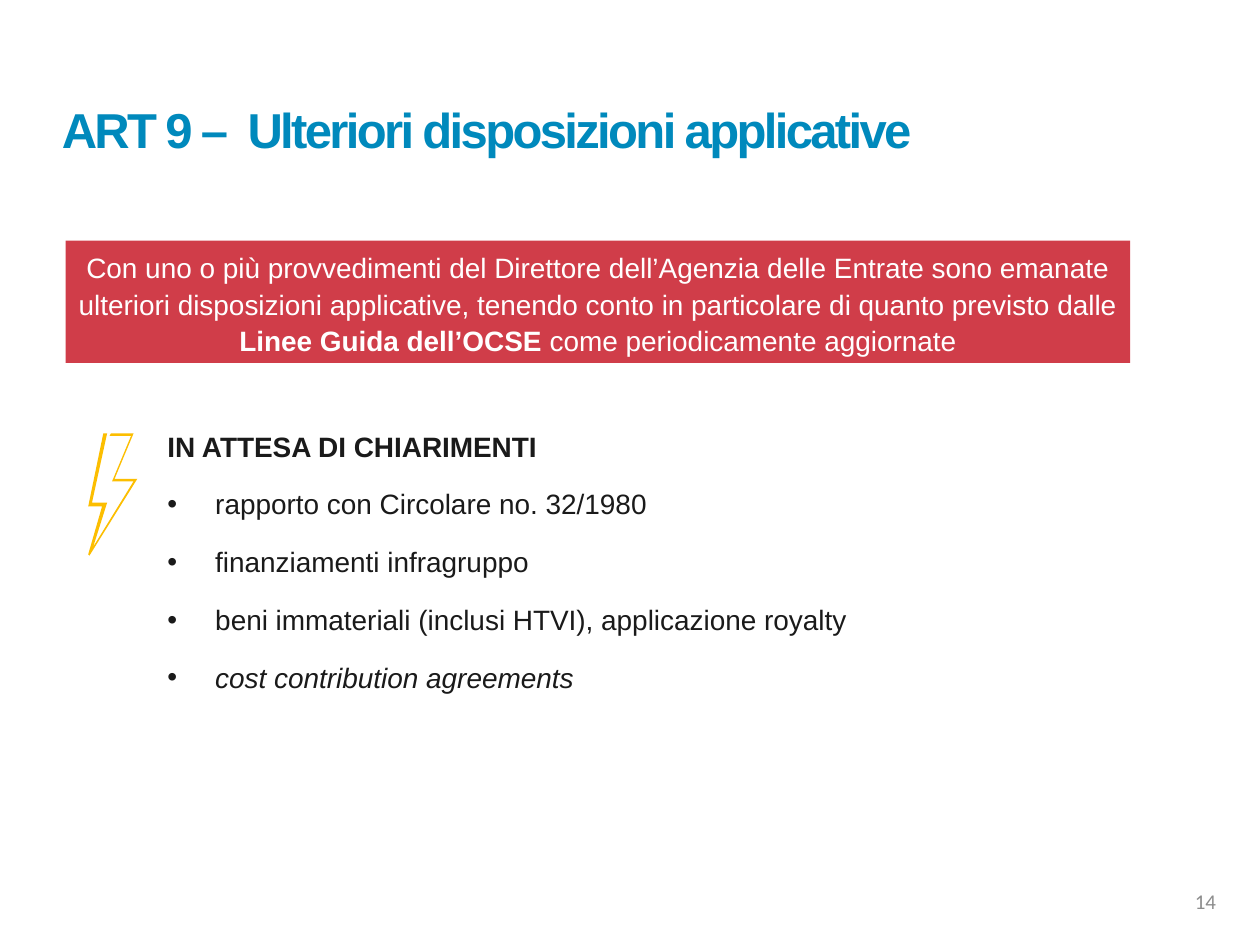
from lxml.etree import SubElement
from pptx import Presentation
from pptx.dml.color import RGBColor
from pptx.enum.shapes import MSO_SHAPE
from pptx.enum.text import MSO_ANCHOR, MSO_AUTO_SIZE, PP_ALIGN
from pptx.oxml.ns import qn
from pptx.util import Inches, Pt

# Content
TITLE = "ART 9 –  Ulteriori disposizioni applicative"
PROVISION = [
    ("Con uno o più provvedimenti del Direttore dell’Agenzia delle Entrate "
     "sono emanate ulteriori disposizioni applicative, tenendo conto in "
     "particolare di quanto previsto dalle ", False),
    ("Linee Guida dell’OCSE", True),
    (" come periodicamente aggiornate", False),
]
PENDING_HEADING = "IN ATTESA DI CHIARIMENTI"
PENDING_ISSUES = [  # text, italic
    ("rapporto con Circolare no. 32/1980", False),
    ("finanziamenti infragruppo", False),
    ("beni immateriali (inclusi HTVI), applicazione royalty", False),
    ("cost contribution agreements", True),
]
PAGE_NUMBER = "14"
BOLT = [
    (0.91, 3.8), (1.09, 3.8), (0.71, 4.41), (0.7, 4.4), (0.81, 4.02),
    (0.7, 4.02), (0.82, 3.44), (0.85, 3.44), (0.73, 3.99), (0.85, 3.99),
    (0.74, 4.34), (1.06, 3.82), (0.89, 3.82), (1.04, 3.46), (0.87, 3.46),
    (0.88, 3.44), (1.06, 3.44),
]

THEME = {
    "title": ("Arial", 28, "0089BC"),
    "body": ("Arial", 16, "1A1A1A"),
    "banner": ("Arial", 16, "FFFFFF"),
    "page": ("Calibri", 12, "8D8D8D"),
    "banner_fill": "D03D49",
    "bolt_fill": "FCBE00",
    "line_spacing": 1.1,
    "paragraph_gap": 12,
}


def box(*lengths):
    return [Inches(length) for length in lengths]


def style(run, role, bold=False, italic=False):
    face, size, colour = THEME[role]
    run.font.name, run.font.size = face, Pt(size)
    run.font.color.rgb = RGBColor.from_string(colour)
    run.font.bold, run.font.italic = bold, italic


def add_run(paragraph, text, role, bold=False, italic=False):
    run = paragraph.add_run()
    run.text = text
    style(run, role, bold, italic)


def paint(shape, colour):
    shape.fill.solid()
    shape.fill.fore_color.rgb = RGBColor.from_string(colour)
    shape.line.fill.background()
    shape.shadow.inherit = False


def add_bullet(paragraph, indent=0.38):
    properties = paragraph._p.get_or_add_pPr()
    properties.set("marL", str(Inches(indent)))
    properties.set("indent", str(-Inches(indent)))
    SubElement(properties, qn("a:buFont"), typeface="Arial")
    SubElement(properties, qn("a:buChar"), char="•")


prs = Presentation()
prs.slide_width, prs.slide_height = Inches(10), Inches(7.5)
slide = prs.slides.add_slide(prs.slide_layouts[5])

# Title
title = slide.shapes.title
title.left, title.top, title.width, title.height = box(0.39, 0.55, 7.14, 1.03)
title.text_frame.text = TITLE
title.text_frame.auto_size = MSO_AUTO_SIZE.NONE
title.text_frame.vertical_anchor = MSO_ANCHOR.MIDDLE
heading = title.text_frame.paragraphs[0]
heading.alignment, heading.line_spacing = PP_ALIGN.LEFT, 0.8
style(heading.runs[0], "title", bold=True)
heading.runs[0].font._element.set("spc", "-150")

# Pending clarifications
pending = slide.shapes.add_textbox(*box(1.23, 3.33, 6.72, 2.58)).text_frame
pending.word_wrap = True
add_run(pending.paragraphs[0], PENDING_HEADING, "body", bold=True)
for issue, italic in PENDING_ISSUES:
    item = pending.add_paragraph()
    add_bullet(item)
    add_run(item, issue, "body", italic=italic)
for paragraph in pending.paragraphs:
    paragraph.line_spacing = THEME["line_spacing"]
    paragraph.space_after = Pt(THEME["paragraph_gap"])

# Provision banner
banner = slide.shapes.add_shape(MSO_SHAPE.RECTANGLE, *box(0.52, 1.91, 8.45, 0.97))
paint(banner, THEME["banner_fill"])
banner.text_frame.word_wrap = True
banner.text_frame.vertical_anchor = MSO_ANCHOR.TOP
provision = banner.text_frame.paragraphs[0]
provision.alignment = PP_ALIGN.CENTER
provision.line_spacing = THEME["line_spacing"]
for text, bold in PROVISION:
    add_run(provision, text, "banner", bold)

# Lightning bolt
bolt_start, *bolt_corners = [box(*point) for point in BOLT]
outline = slide.shapes.build_freeform(*bolt_start)
outline.add_line_segments(bolt_corners, close=True)
paint(outline.convert_to_shape(), THEME["bolt_fill"])

# Page number
page = slide.shapes.add_textbox(*box(7.42, 6.95, 2.33, 0.4)).text_frame
page.word_wrap = True
page.vertical_anchor = MSO_ANCHOR.MIDDLE
page.paragraphs[0].alignment = PP_ALIGN.RIGHT
add_run(page.paragraphs[0], PAGE_NUMBER, "page")

prs.save("out.pptx")
